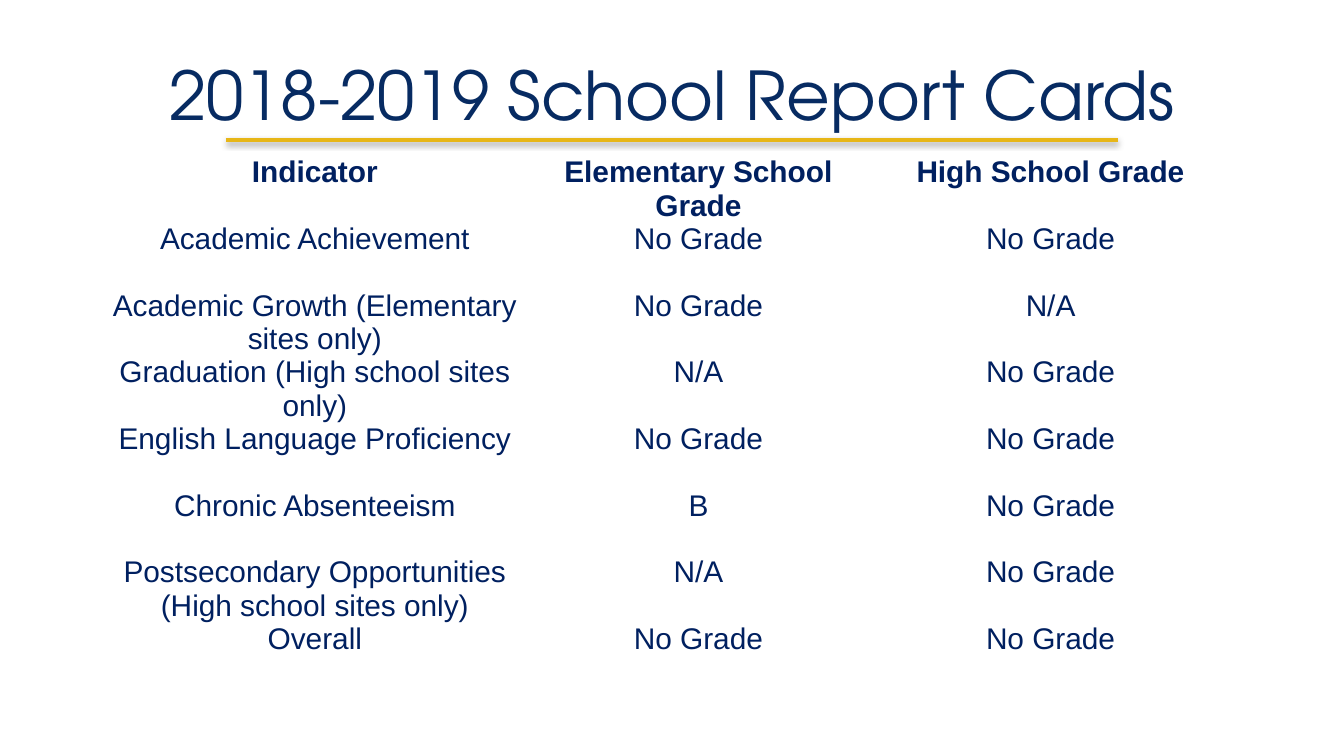
from dataclasses import dataclass
from lxml.etree import SubElement
from pptx import Presentation
from pptx.dml.color import RGBColor
from pptx.enum.shapes import MSO_CONNECTOR
from pptx.enum.text import MSO_ANCHOR, PP_ALIGN
from pptx.oxml.ns import qn
from pptx.util import Cm, Pt

TITLE = "2018-2019 School Report Cards"
HEADER = ("Indicator", "Elementary School Grade", "High School Grade")
GRADES = [
    ("Academic Achievement", "No Grade", "No Grade"),
    ("Academic Growth (Elementary sites only)", "No Grade", "N/A"),
    ("Graduation (High school sites only)", "N/A", "No Grade"),
    ("English Language Proficiency", "No Grade", "No Grade"),
    ("Chronic Absenteeism", "B", "No Grade"),
    ("Postsecondary Opportunities (High school sites only)", "N/A", "No Grade"),
    ("Overall", "No Grade", "No Grade"),
]
COLUMN_WIDTHS = (8.1, 6.4, 6.91)
ROW_HEIGHT = 1.26


@dataclass(frozen=True)
class Theme:
    title_color: str = "072B62"
    table_color: str = "002060"
    rule_color: str = "E7B617"
    shadow_color: str = "000000"
    title_font: str = "TeX Gyre Adventor"
    table_font: str = "Arial"
    title_size: int = 36
    table_size: int = 16


THEME = Theme()


def write_text(frame, text, *, font, size, color, bold=False, anchor=MSO_ANCHOR.TOP):
    frame.word_wrap = True
    frame.vertical_anchor = anchor
    para = frame.paragraphs[0]
    para.alignment = PP_ALIGN.CENTER
    span = para.add_run()
    span.text = text
    span.font.name = font
    span.font.size = Pt(size)
    span.font.bold = bold
    span.font.color.rgb = RGBColor.from_string(color)


def add_rule(page):
    rule = page.shapes.add_connector(
        MSO_CONNECTOR.STRAIGHT, Cm(4.27), Cm(2.64), Cm(21.13), Cm(2.64))
    rule.line.color.rgb = RGBColor.from_string(THEME.rule_color)
    rule.line.width = Pt(2)
    effects = SubElement(rule._element.spPr, qn("a:effectLst"))
    shadow = SubElement(effects, qn("a:outerShdw"), blurRad=str(Pt(3.1)),
                        dist=str(Pt(1.6)), dir="5400000", rotWithShape="0")
    shade = SubElement(shadow, qn("a:srgbClr"), val=THEME.shadow_color)
    SubElement(shade, qn("a:alpha"), val="38000")


def add_grades(page):
    rows = [HEADER, *GRADES]
    frame = page.shapes.add_table(
        len(rows), len(HEADER), Cm(1.9), Cm(2.95),
        Cm(sum(COLUMN_WIDTHS)), Cm(ROW_HEIGHT * len(rows)))
    table = frame.table
    table.first_row = False
    table.horz_banding = False
    frame._element.find(".//" + qn("a:tableStyleId")).text = (
        "{2D5ABB26-0587-4C30-8999-92F81FD0307C}")
    for column, width in zip(table.columns, COLUMN_WIDTHS):
        column.width = Cm(width)
    for row_index, row in enumerate(rows):
        table.rows[row_index].height = Cm(ROW_HEIGHT)
        for column_index, text in enumerate(row):
            cell = table.cell(row_index, column_index)
            cell.fill.background()
            cell.margin_left = cell.margin_right = Cm(0.18)
            cell.margin_top = cell.margin_bottom = 0
            write_text(cell.text_frame, text, font=THEME.table_font,
                       size=THEME.table_size, color=THEME.table_color,
                       bold=row_index == 0)
            cell.vertical_anchor = MSO_ANCHOR.TOP


def add_title(page):
    box = page.shapes.add_textbox(Cm(1.27), Cm(0.58), Cm(22.86), Cm(2.39))
    frame = box.text_frame
    frame.margin_left = frame.margin_right = Cm(0.25)
    frame.margin_top = frame.margin_bottom = Cm(0.25)
    write_text(frame, TITLE, font=THEME.title_font, size=THEME.title_size,
               color=THEME.title_color, anchor=MSO_ANCHOR.MIDDLE)


def main():
    deck = Presentation()
    deck.slide_width, deck.slide_height = Cm(25.4), Cm(14.29)
    page = deck.slides.add_slide(deck.slide_layouts[6])
    add_rule(page)
    add_grades(page)
    add_title(page)
    deck.save("out.pptx")


if __name__ == "__main__":
    main()
